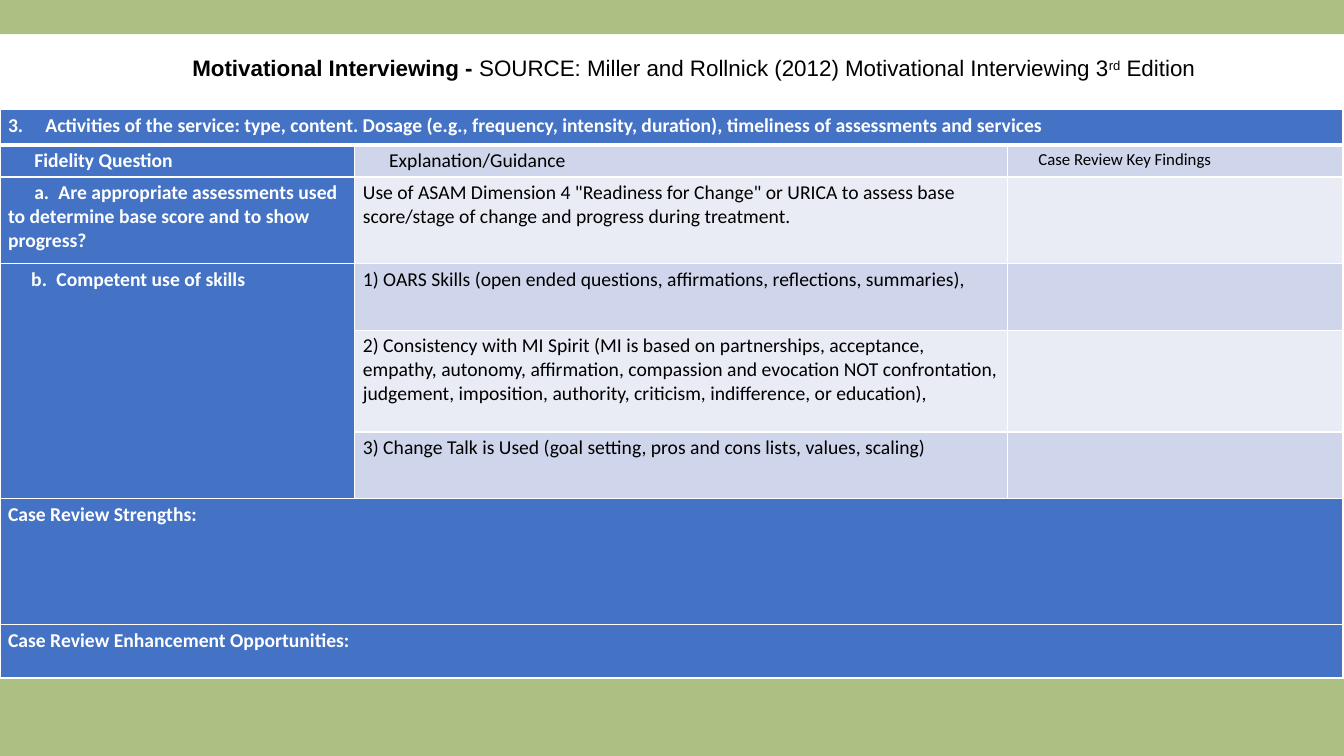
import pptx
import pptx.dml.color
import pptx.enum.shapes
import pptx.enum.text
import pptx.util
from lxml import etree
from pptx.util import Inches

GREEN, BLUE, WHITE, BLACK = "ADC084", "4472C4", "FFFFFF", "000000"
BAND_DARK, BAND_LIGHT = "CFD5EA", "E9EBF5"
DRAWING = "{http://schemas.openxmlformats.org/drawingml/2006/main}"


def color(value):
    return pptx.dml.color.RGBColor.from_string(value)


class ReviewSlide:
    """Holds the page and the shared style."""

    def __init__(self, deck):
        self.page = deck.slides.add_slide(deck.slide_layouts[5])

    def style(self, span, font, size, value, bold):
        span.font.name = font
        span.font.size = pptx.util.Pt(size)
        span.font.color.rgb = color(value)
        span.font.bold = bold

    def band(self, top, height):
        shape = self.page.shapes.add_shape(
            pptx.enum.shapes.MSO_SHAPE.RECTANGLE,
            0, Inches(top), Inches(13.33), Inches(height))
        shape.shadow.inherit = False
        shape.fill.solid()
        shape.fill.fore_color.rgb = color(GREEN)
        shape.line.fill.background()

    def title(self, pieces):
        box = self.page.shapes.title
        box.left, box.top = Inches(0.53), Inches(0.49)
        box.width, box.height = Inches(12.7), Inches(0.37)
        frame = box.text_frame
        frame.word_wrap = True
        frame.auto_size = pptx.enum.text.MSO_AUTO_SIZE.NONE
        frame.vertical_anchor = pptx.enum.text.MSO_ANCHOR.MIDDLE
        para = frame.paragraphs[0]
        para.alignment = pptx.enum.text.PP_ALIGN.CENTER
        for text, bold, baseline in pieces:
            span = para.add_run()
            span.text = text
            self.style(span, "Arial", 16, BLACK, bold)
            if baseline:
                span._r.get_or_add_rPr().set("baseline", str(baseline))

    def table(self, top, widths, heights):
        frame = self.page.shapes.add_table(
            len(heights), len(widths), 0, Inches(top),
            Inches(sum(widths)), Inches(sum(heights)))
        grid = frame.table
        grid.first_row = grid.horz_banding = False
        for column, width in zip(grid.columns, widths):
            column.width = Inches(width)
        for row, height in zip(grid.rows, heights):
            row.height = Inches(height)
        return grid

    def cell(self, cell, text, fill, size=14, margin=0, indent=0, tab=None):
        cell.margin_left = cell.margin_right = Inches(0.08)
        cell.margin_top = cell.margin_bottom = Inches(0.04)
        cell.fill.solid()
        cell.fill.fore_color.rgb = color(fill)
        para = cell.text_frame.paragraphs[0]
        properties = para._p.get_or_add_pPr()
        properties.set("marL", str(Inches(margin)))
        properties.set("indent", str(Inches(indent)))
        if tab:
            stops = etree.SubElement(properties, DRAWING + "tabLst")
            etree.SubElement(stops, DRAWING + "tab",
                             pos=str(Inches(tab)), algn="l")
        para.font.size = pptx.util.Pt(size)
        if text:
            para.text = text
            on_blue = fill == BLUE
            self.style(para.runs[0], "Calibri", size,
                       WHITE if on_blue else BLACK, on_blue)

    def borders(self, cell, top=1, bottom=1):
        properties = cell._tc.get_or_add_tcPr()
        sides = [("lnL", 1), ("lnR", 1), ("lnT", top), ("lnB", bottom)]
        for place, (side, width) in enumerate(sides):
            line = etree.Element(DRAWING + side, w=str(pptx.util.Pt(width)))
            fill = etree.SubElement(line, DRAWING + "solidFill")
            etree.SubElement(fill, DRAWING + "srgbClr", val=WHITE)
            properties.insert(place, line)


def main():
    deck = pptx.Presentation()
    deck.slide_width, deck.slide_height = Inches(13.33), Inches(7.5)
    slide = ReviewSlide(deck)

    # Green bands and heading
    slide.band(6.71, 0.79)
    slide.band(0, 0.34)
    slide.title([
        ("Motivational Interviewing - ", True, 0),
        ("SOURCE: Miller and Rollnick (2012) Motivational Interviewing 3",
         False, 0),
        ("rd", False, 30000),
        (" Edition", False, 0),
    ])

    # Table grid and merged cells
    grid = slide.table(1.09, [3.52, 6.47, 3.33],
                       [0.35, 0.3, 0.86, 0.66, 1.01, 0.66, 1.25, 0.53])
    for row in (0, 6, 7):
        grid.cell(row, 0).merge(grid.cell(row, 2))
    grid.cell(3, 0).merge(grid.cell(5, 0))

    # Blue full-width rows and question column
    slide.cell(grid.cell(0, 0),
               "3.\tActivities of the service: type, content. Dosage (e.g., "
               "frequency, intensity, duration), timeliness of assessments "
               "and services", BLUE, margin=0.37, indent=-0.37, tab=0.37)
    slide.cell(grid.cell(1, 0), "Fidelity Question", BLUE, indent=0.26)
    slide.cell(grid.cell(2, 0),
               "a.\tAre appropriate assessments used to determine base score "
               "and to show progress?", BLUE, indent=0.26, tab=0.5)
    slide.cell(grid.cell(3, 0), "b.\tCompetent use of skills", BLUE,
               margin=0.48, indent=-0.25, tab=0.48)
    slide.cell(grid.cell(6, 0), "Case Review Strengths:", BLUE)
    slide.cell(grid.cell(7, 0), "Case Review Enhancement Opportunities:", BLUE)

    # Guidance and findings columns
    slide.cell(grid.cell(1, 1), "Explanation/Guidance", BAND_DARK, indent=0.26)
    slide.cell(grid.cell(1, 2), "Case Review Key Findings", BAND_DARK,
               size=12, indent=0.23)
    guidance = [
        'Use of ASAM Dimension 4 "Readiness for Change" or URICA to assess '
        "base score/stage of change and progress during treatment.",
        "1) OARS Skills (open ended questions, affirmations, reflections, "
        "summaries),",
        "2) Consistency with MI Spirit (MI is based on partnerships, "
        "acceptance, empathy, autonomy, affirmation, compassion and evocation "
        "NOT confrontation, judgement, imposition, authority, criticism, "
        "indifference, or education),",
        "3) Change Talk is Used (goal setting, pros and cons lists, values, "
        "scaling)",
    ]
    for row, text in enumerate(guidance, start=2):
        fill = BAND_DARK if row % 2 else BAND_LIGHT
        slide.cell(grid.cell(row, 1), text, fill)
        slide.cell(grid.cell(row, 2), "", fill)

    # White rules, heavier under the heading row
    for row in range(len(grid.rows)):
        for column in range(len(grid.columns)):
            cell = grid.cell(row, column)
            if not cell.is_spanned:
                slide.borders(cell, top=3 if row == 1 else 1,
                              bottom=3 if row == 0 else 1)

    deck.save("out.pptx")


if __name__ == "__main__":
    main()
